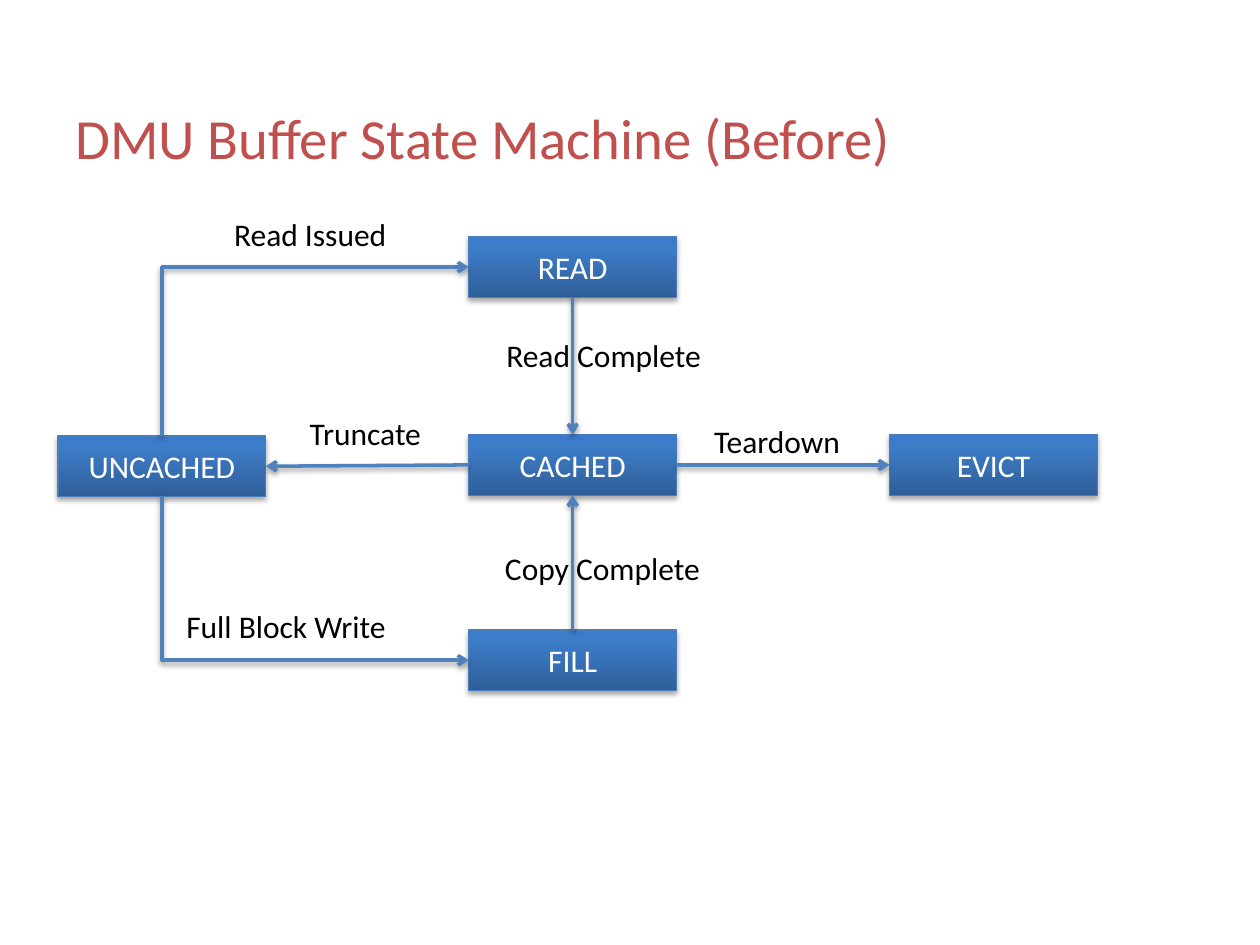
from dataclasses import dataclass
from lxml import etree
from pptx import Presentation
from pptx.dml.color import RGBColor
from pptx.enum.shapes import MSO_CONNECTOR, MSO_SHAPE
from pptx.enum.text import MSO_ANCHOR, MSO_AUTO_SIZE, PP_ALIGN
from pptx.oxml.ns import qn
from pptx.util import Inches, Pt

PROCESS = MSO_SHAPE.FLOWCHART_PROCESS
STRAIGHT, ELBOW = MSO_CONNECTOR.STRAIGHT, MSO_CONNECTOR.ELBOW
MIDDLE, CENTER, LEFT_ALIGN = MSO_ANCHOR.MIDDLE, PP_ALIGN.CENTER, PP_ALIGN.LEFT
GROW, FIXED = MSO_AUTO_SIZE.SHAPE_TO_FIT_TEXT, MSO_AUTO_SIZE.NONE
TOP, LEFT, BOTTOM, RIGHT = range(4)


@dataclass(frozen=True)
class Theme:
    font: str = "Calibri"
    title_size: float = 32.4
    body_size: float = 18
    title: str = "C0504D"
    label: str = "000000"
    state_text: str = "FFFFFF"
    state_line: str = "4B7EBC"
    arrow: str = "4F81BD"
    shadow: str = "000000"
    gradient: tuple = ((0, "2F5F99"), (80, "3D7CC7"), (100, "3A7CCB"))
    state_line_width: float = 0.75
    arrow_width: float = 2


@dataclass(frozen=True)
class Grid:
    columns: tuple = (0.46, 3.72, 7.06)
    rows: tuple = (1.88, 3.45, 5.0)
    width: float = 1.65
    height: float = 0.48


@dataclass(frozen=True)
class State:
    name: str
    column: int
    row: int
    nudge: float = 0


@dataclass(frozen=True)
class Transition:
    source: str
    source_side: int
    target: str
    target_side: int


@dataclass(frozen=True)
class Label:
    text: str
    left: float
    top: float
    width: float
    height: float = 0.4


THEME = Theme()
GRID = Grid()
TITLE = Label("DMU Buffer State Machine (Before)", 0.5, 0.75, 8.5, 0.67)
STATES = (
    State("UNCACHED", 0, 1, 0.01),
    State("READ", 1, 0),
    State("FILL", 1, 2),
    State("CACHED", 1, 1),
    State("EVICT", 2, 1),
)
BENT_TARGETS = ("READ", "FILL")
TRANSITIONS = (
    Transition("READ", BOTTOM, "CACHED", TOP),
    Transition("FILL", TOP, "CACHED", BOTTOM),
    Transition("CACHED", RIGHT, "EVICT", LEFT),
    Transition("CACHED", LEFT, "UNCACHED", RIGHT),
)
LABELS = (
    Label("Read Issued", 1.76, 1.66, 1.43),
    Label("Full Block Write", 1.38, 4.77, 1.81),
    Label("Truncate", 2.36, 3.24, 1.12),
    Label("Read Complete", 3.92, 2.62, 1.77),
    Label("Copy Complete", 3.91, 4.31, 1.77),
    Label("Teardown", 5.57, 3.3, 1.24),
)


def rgb(value: str) -> RGBColor:
    return RGBColor.from_string(value)


def write(box, text: str, size: float, color: str, align) -> None:
    para = box.text_frame.paragraphs[0]
    para.alignment = align
    span = para.add_run()
    span.text = text
    span.font.name = THEME.font
    span.font.size = Pt(size)
    span.font.color.rgb = rgb(color)


def add_color(parent, value: str):
    color = etree.SubElement(parent, qn("a:srgbClr"))
    color.set("val", value)
    return color


def cast_shadow(effects, distance: float, opacity: int) -> None:
    shadow = etree.SubElement(effects, qn("a:outerShdw"))
    shadow.set("blurRad", str(Pt(3.1)))
    shadow.set("dist", str(Pt(distance)))
    shadow.set("dir", str(90 * 60000))
    shadow.set("rotWithShape", "0")
    alpha = etree.SubElement(add_color(shadow, THEME.shadow), qn("a:alpha"))
    alpha.set("val", str(opacity * 1000))


def add_state(page, state: State):
    box = page.shapes.add_shape(
        PROCESS, Inches(GRID.columns[state.column]),
        Inches(GRID.rows[state.row] + state.nudge),
        Inches(GRID.width), Inches(GRID.height))
    box.fill.gradient()
    box.fill.gradient_angle = 90
    stops = box.element.spPr.find(".//" + qn("a:gsLst"))
    stops.clear()
    for position, color in THEME.gradient:
        stop = etree.SubElement(stops, qn("a:gs"))
        stop.set("pos", str(position * 1000))
        add_color(stop, color)
    box.line.color.rgb = rgb(THEME.state_line)
    box.line.width = Pt(THEME.state_line_width)
    box.shadow.inherit = False
    cast_shadow(box.element.spPr.find(qn("a:effectLst")), 1.8, 35)
    box.text_frame.word_wrap = True
    box.text_frame.vertical_anchor = MIDDLE
    write(box, state.name, THEME.body_size, THEME.state_text, CENTER)
    return box


def style_arrow(arrow) -> None:
    arrow.line.color.rgb = rgb(THEME.arrow)
    arrow.line.width = Pt(THEME.arrow_width)
    properties = arrow._element.spPr
    head = etree.SubElement(properties.find(qn("a:ln")), qn("a:tailEnd"))
    head.set("type", "arrow")
    cast_shadow(etree.SubElement(properties, qn("a:effectLst")), 1.6, 38)


def add_bent_arrow(page, source, target) -> None:
    start_x = source.left + source.width // 2
    end_y = target.top + target.height // 2
    rising = end_y < source.top
    start_y = source.top if rising else source.top + source.height
    half_run = (target.left - start_x) // 2
    half_rise = abs(end_y - start_y) // 2
    center_x, center_y = start_x + half_run, (start_y + end_y) // 2
    offset = half_run if rising else -half_run
    arrow = page.shapes.add_connector(
        ELBOW, center_x + half_rise, center_y + offset,
        center_x - half_rise, center_y - offset)
    properties = arrow._element.spPr
    turn = 90 if rising else 270
    properties.find(qn("a:xfrm")).set("rot", str(turn * 60000))
    properties.find(qn("a:prstGeom")).set("prst", "bentConnector2")
    style_arrow(arrow)


def add_transition(page, boxes: dict, transition: Transition) -> None:
    arrow = page.shapes.add_connector(STRAIGHT, 0, 0, 0, 0)
    arrow.begin_connect(boxes[transition.source], transition.source_side)
    arrow.end_connect(boxes[transition.target], transition.target_side)
    style_arrow(arrow)


def add_label(page, label: Label, size: float, color: str, wrap: bool) -> None:
    box = page.shapes.add_textbox(
        Inches(label.left), Inches(label.top),
        Inches(label.width), Inches(label.height))
    box.text_frame.word_wrap = wrap
    box.text_frame.auto_size = FIXED if wrap else GROW
    if wrap:
        box.text_frame.vertical_anchor = MIDDLE
    write(box, label.text, size, color, LEFT_ALIGN)


def main() -> None:
    deck = Presentation()
    deck.slide_width, deck.slide_height = Inches(10), Inches(7.5)
    page = deck.slides.add_slide(deck.slide_layouts[6])
    add_label(page, TITLE, THEME.title_size, THEME.title, True)
    boxes = {state.name: add_state(page, state) for state in STATES}
    for name in BENT_TARGETS:
        add_bent_arrow(page, boxes["UNCACHED"], boxes[name])
    for transition in TRANSITIONS:
        add_transition(page, boxes, transition)
    for label in LABELS:
        add_label(page, label, THEME.body_size, THEME.label, False)
    deck.save("out.pptx")


if __name__ == "__main__":
    main()
